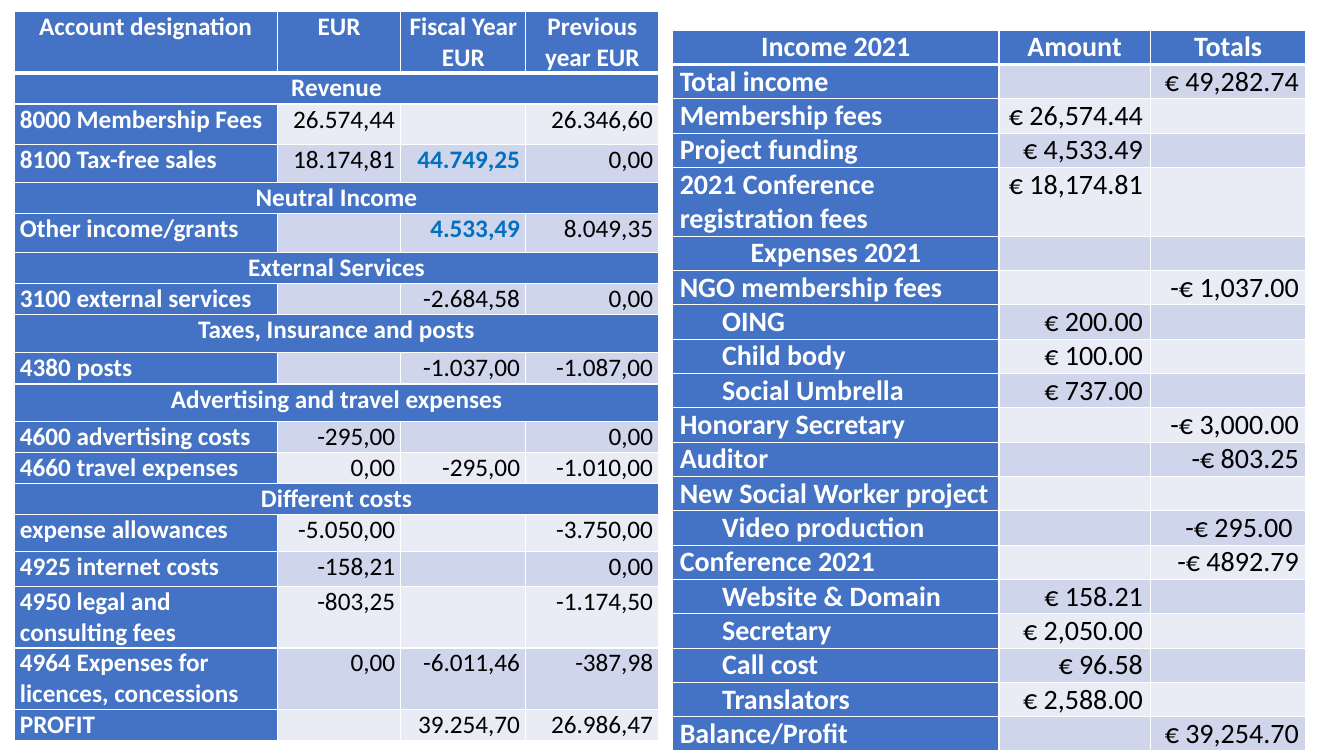
import pptx
import pptx.dml.color
import pptx.enum.text
import pptx.oxml.ns
import pptx.util
from lxml import etree

WIDTH = pptx.util.Inches(13.33)
HEIGHT = pptx.util.Inches(7.5)
COLORS = {
    "header": "4472C4",
    "odd_band": "CFD5EA",
    "even_band": "E9EBF5",
    "white": "FFFFFF",
    "black": "000000",
    "highlight": "0070C0",
}
ALIGN = pptx.enum.text.PP_ALIGN

ACCOUNTS = [
    ("Account designation", "EUR", "Fiscal Year EUR", "Previous year EUR"),
    ("Revenue",),
    ("8000 Membership Fees", "26.574,44", "", "26.346,60"),
    ("8100 Tax-free sales", "18.174,81", "44.749,25", "0,00"),
    ("Neutral Income",),
    ("Other income/grants", "", "4.533,49", "8.049,35"),
    ("External Services",),
    ("3100 external services", "", "-2.684,58", "0,00"),
    ("Taxes, Insurance and posts",),
    ("4380 posts", "", "-1.037,00", "-1.087,00"),
    ("Advertising and travel expenses",),
    ("4600 advertising costs", "-295,00", "", "0,00"),
    ("4660 travel expenses", "0,00", "-295,00", "-1.010,00"),
    ("Different costs",),
    ("expense allowances", "-5.050,00", "", "-3.750,00"),
    ("4925 internet costs", "-158,21", "", "0,00"),
    ("4950 legal and consulting fees", "-803,25", "", "-1.174,50"),
    ("4964 Expenses for licences, concessions", "0,00", "-6.011,46", "-387,98"),
    ("PROFIT", "", "39.254,70", "26.986,47"),
]
ACCOUNT_TALL_ROWS = {0: 8.13, 2: 5.33, 3: 5.07, 5: 5.07, 8: 5.07, 10: 4.93,
                     14: 4.8, 15: 4.67, 16: 8.13, 17: 8.13}
HIGHLIGHTS = {"44.749,25", "4.533,49"}

BUDGET = [
    ("Income 2021", "Amount", "Totals"),
    ("Total income", "", "€ 49,282.74"),
    ("Membership fees", "€ 26,574.44", ""),
    ("Project funding", "€ 4,533.49", ""),
    ("2021 Conference registration fees", "€ 18,174.81", ""),
    ("Expenses 2021", "", ""),
    ("NGO membership fees", "", "-€ 1,037.00"),
    ("OING", "€ 200.00", ""),
    ("Child body", "€ 100.00", ""),
    ("Social Umbrella", "€ 737.00", ""),
    ("Honorary Secretary", "", "-€ 3,000.00"),
    ("Auditor", "", "-€ 803.25"),
    ("New Social Worker project", "", ""),
    ("Video production", "", "-€ 295.00 "),
    ("Conference 2021", "", "-€ 4892.79"),
    ("Website & Domain", "€ 158.21", ""),
    ("Secretary", "€ 2,050.00", ""),
    ("Call cost", "€ 96.58", ""),
    ("Translators", "€ 2,588.00", ""),
    ("Balance/Profit", "", "€ 39,254.70"),
]
SUB_ITEMS = {"OING", "Child body", "Social Umbrella", "Video production",
             "Website & Domain", "Secretary", "Call cost", "Translators"}
CENTERED_LABELS = {"Expenses 2021"}


def across(percent):
    """Convert a percentage of the slide width to a length."""
    return round(WIDTH * percent / 100)


def down(percent):
    """Convert a percentage of the slide height to a length."""
    return round(HEIGHT * percent / 100)


def write_text(cell, text, size, color="white", bold=True, align=ALIGN.LEFT, indent=0):
    """Write one formatted paragraph into a cell."""
    paragraph = cell.text_frame.paragraphs[0]
    paragraph.alignment = align
    if indent:
        properties = paragraph._p.get_or_add_pPr()
        properties.set("marL", str(across(indent)))
        properties.set("indent", "0")
    run = paragraph.add_run()
    run.text = text
    run.font.name = "Calibri"
    run.font.size = pptx.util.Pt(size)
    run.font.bold = bold
    run.font.color.rgb = pptx.dml.color.RGBColor.from_string(COLORS[color])


def style_cell(cell, fill, margin, top=1, bottom=1):
    """Set the margins, white borders and fill of a cell."""
    cell.margin_left = cell.margin_right = across(margin)
    cell.margin_top = cell.margin_bottom = 0
    properties = cell._tc.get_or_add_tcPr()
    for side, points in (("L", 1), ("R", 1), ("T", top), ("B", bottom)):
        line = etree.SubElement(properties, pptx.oxml.ns.qn(f"a:ln{side}"),
                                w=str(pptx.util.Pt(points)))
        paint = etree.SubElement(line, pptx.oxml.ns.qn("a:solidFill"))
        etree.SubElement(paint, pptx.oxml.ns.qn("a:srgbClr"), val=COLORS["white"])
    cell.fill.solid()
    cell.fill.fore_color.rgb = pptx.dml.color.RGBColor.from_string(COLORS[fill])


def add_ledger(slide, rows, left, top, widths, row_height, size, margin,
               label_align, tall_rows=None):
    """Add a ledger whose one-item rows are headings across all columns."""
    heights = [(tall_rows or {}).get(index, row_height) for index in range(len(rows))]
    ledger = slide.shapes.add_table(
        len(rows), len(widths), across(left), down(top),
        across(sum(widths)), down(sum(heights))).table
    for column, width in zip(ledger.columns, widths):
        column.width = across(width)
    for index, entries in enumerate(rows):
        ledger.rows[index].height = down(heights[index])
        is_section = len(entries) == 1
        band = "odd_band" if index % 2 else "even_band"
        for position in range(len(widths)):
            is_header = index == 0 or is_section or position == 0
            style_cell(ledger.cell(index, position), "header" if is_header else band,
                       margin, top=3 if index == 1 else 1, bottom=3 if index == 0 else 1)
        if is_section:
            ledger.cell(index, 0).merge(ledger.cell(index, len(widths) - 1))
        for position, text in enumerate(entries):
            cell = ledger.cell(index, position)
            if index == 0 or is_section or text in CENTERED_LABELS:
                write_text(cell, text, size, align=ALIGN.CENTER)
            elif position == 0:
                align = ALIGN.LEFT if text.startswith("2021") else label_align
                write_text(cell, text, size, align=align,
                           indent=3.15 if text in SUB_ITEMS else 0)
            elif text:
                marked = text in HIGHLIGHTS
                write_text(cell, text, size, color="highlight" if marked else "black",
                           bold=marked, align=ALIGN.RIGHT)


def main():
    """Build the slide with the account and budget ledgers."""
    deck = pptx.Presentation()
    deck.slide_width = WIDTH
    deck.slide_height = HEIGHT
    slide = deck.slides.add_slide(deck.slide_layouts[6])
    add_ledger(slide, ACCOUNTS, left=1.05, top=1.5, widths=[19.58, 9.2, 9.3, 9.9],
               row_height=4.13, size=18, margin=0.43, label_align=ALIGN.LEFT,
               tall_rows=ACCOUNT_TALL_ROWS)
    add_ledger(slide, BUDGET, left=50.05, top=4, widths=[24.28, 11.25, 11.6],
               row_height=4.4, size=20, margin=0.53, label_align=ALIGN.JUSTIFY)
    deck.save("out.pptx")


if __name__ == "__main__":
    main()
